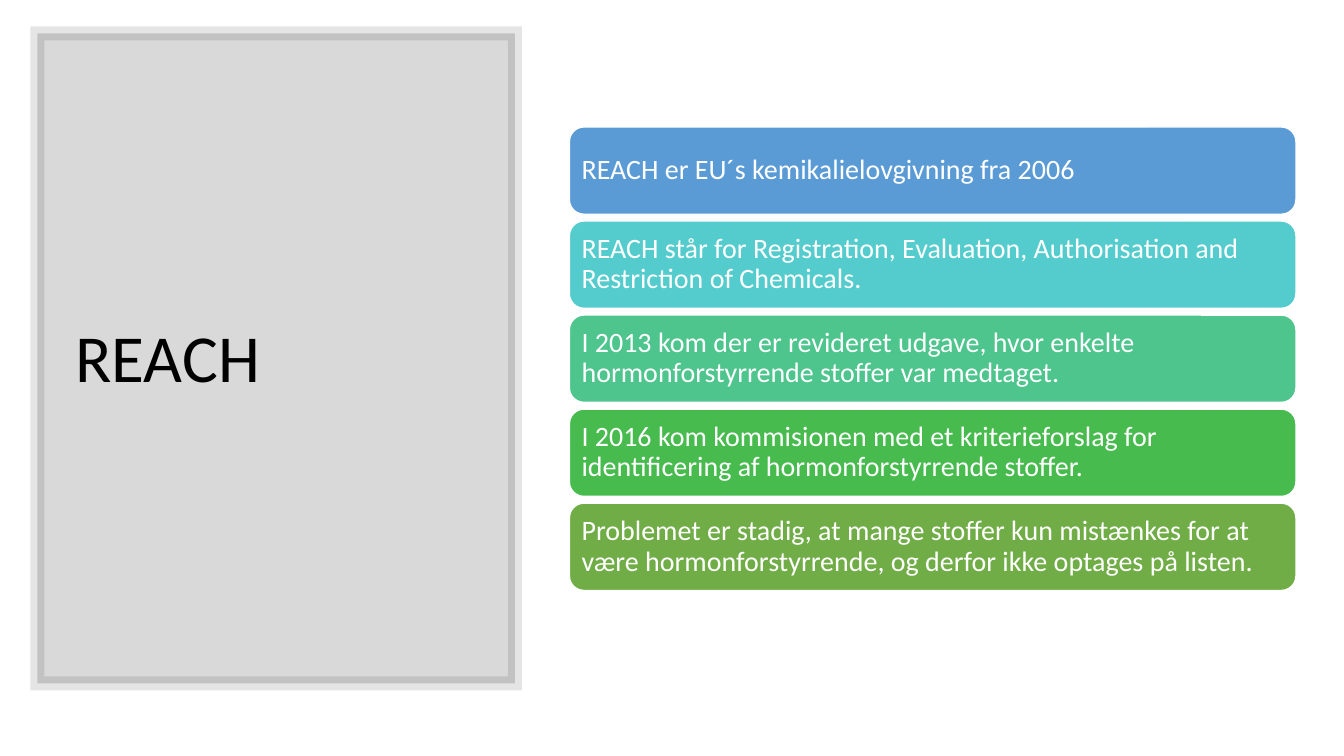
from dataclasses import dataclass

from lxml.etree import SubElement
from pptx import Presentation
from pptx.dml.color import RGBColor
from pptx.enum.shapes import MSO_SHAPE as Preset
from pptx.enum.text import MSO_ANCHOR as Anchor, PP_ALIGN as Align
from pptx.oxml.ns import qn
from pptx.util import Cm, Pt

COLORS = {
    "black": "000000",
    "white": "FFFFFF",
    "blue": "5B9BD5",
    "turquoise": "54CCCD",
    "mint": "4DC58D",
    "green": "48BB4F",
    "olive": "70AD47",
}
FONT = "Calibri"
BAR_LEFT, BAR_TOP, BAR_WIDTH, BAR_HEIGHT, BAR_STEP = 14.35, 3.2, 18.31, 2.2, 2.37


@dataclass
class Bar:
    text: str
    color: str


BARS = [
    Bar("REACH er EU´s kemikalielovgivning fra 2006", "blue"),
    Bar("REACH står for Registration, Evaluation, Authorisation and "
        "Restriction of Chemicals.", "turquoise"),
    Bar("I 2013 kom der er revideret udgave, hvor enkelte "
        "hormonforstyrrende stoffer var medtaget.", "mint"),
    Bar("I 2016 kom kommisionen med et kriterieforslag for "
        "identificering af hormonforstyrrende stoffer.", "green"),
    Bar("Problemet er stadig, at mange stoffer kun mistænkes for at være "
        "hormonforstyrrende, og derfor ikke optages på listen.", "olive"),
]


def rgb(name: str) -> RGBColor:
    return RGBColor.from_string(COLORS[name])


def set_opacity(fill, percent: int) -> None:
    """Make a solid fill partly transparent."""
    color = fill._xPr.find(qn("a:solidFill"))[0]
    SubElement(color, qn("a:alpha"), val=str(percent * 1000))


def write_text(shape, text: str, *, size: float, color: str, inset: float) -> None:
    frame = shape.text_frame
    frame.word_wrap = True
    frame.vertical_anchor = Anchor.MIDDLE
    frame.margin_left = frame.margin_right = Cm(inset)
    frame.margin_top = frame.margin_bottom = Cm(inset)
    para = frame.paragraphs[0]
    para.alignment = Align.LEFT
    para.line_spacing = 0.9
    span = para.add_run()
    span.text = text
    span.font.name = FONT
    span.font.size = Pt(size)
    span.font.color.rgb = rgb(color)


def add_box(page, preset, left: float, top: float, width: float, height: float,
            *, fill: str, line: str, line_width: float):
    box = page.shapes.add_shape(preset, Cm(left), Cm(top), Cm(width), Cm(height))
    box.shadow.inherit = False
    box.fill.solid()
    box.fill.fore_color.rgb = rgb(fill)
    box.line.color.rgb = rgb(line)
    box.line.width = Pt(line_width)
    return box


def add_panel(page) -> None:
    panel = add_box(page, Preset.RECTANGLE, 0.94, 0.84, 12.04, 16.38,
                    fill="black", line="black", line_width=10)
    set_opacity(panel.fill, 15)
    set_opacity(panel.line.fill, 10)
    SubElement(panel.line._ln, qn("a:miter"), lim="800000")
    # Place the panel behind the title
    page.shapes.title._element.addprevious(panel._element)


def add_title(page, text: str) -> None:
    title = page.shapes.title
    title.left, title.top = Cm(1.65), Cm(1.78)
    title.width, title.height = Cm(10.57), Cm(14.61)
    write_text(title, text, size=48, color="black", inset=0.25)


def add_bar(page, bar: Bar, top: float) -> None:
    box = add_box(page, Preset.ROUNDED_RECTANGLE, BAR_LEFT, top, BAR_WIDTH, BAR_HEIGHT,
                  fill=bar.color, line="white", line_width=1)
    write_text(box, bar.text, size=20, color="white", inset=0.2)


def main() -> None:
    deck = Presentation()
    deck.slide_width, deck.slide_height = Cm(33.87), Cm(19.05)
    page = deck.slides.add_slide(deck.slide_layouts[5])

    # Left panel with title
    add_panel(page)
    add_title(page, "REACH")

    # Stacked statements
    for index, bar in enumerate(BARS):
        add_bar(page, bar, BAR_TOP + index * BAR_STEP)

    deck.save("out.pptx")


if __name__ == "__main__":
    main()
